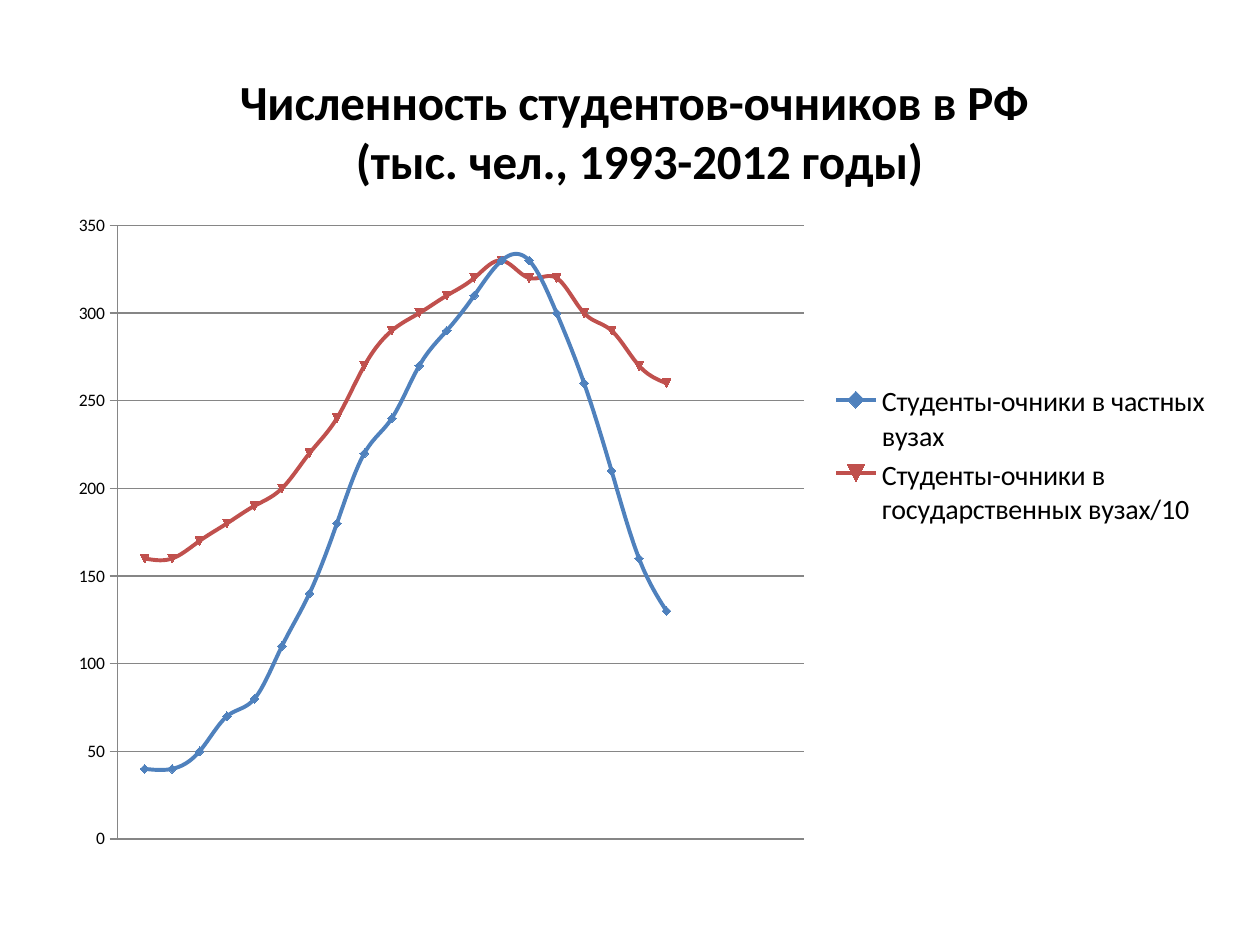
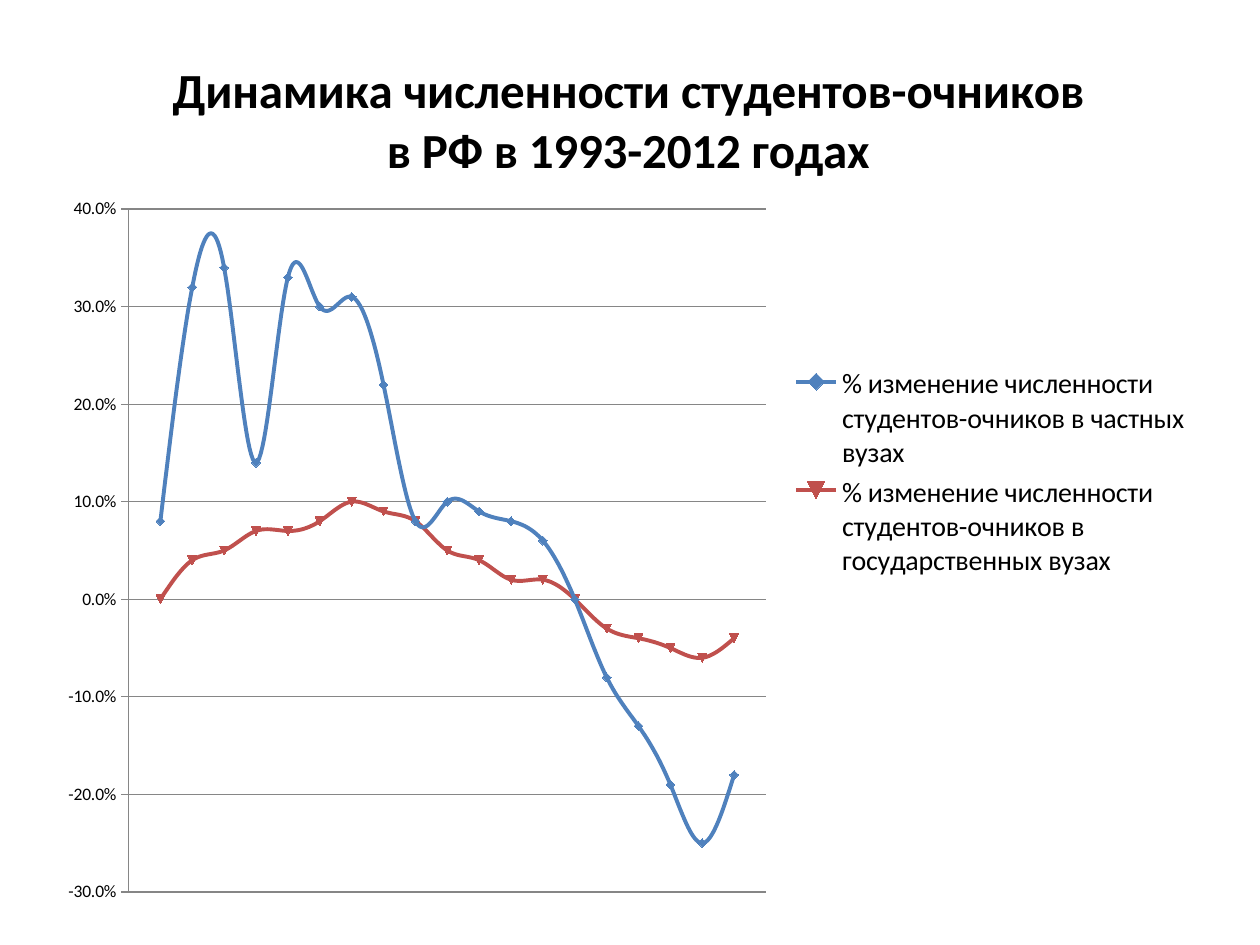
from pptx import Presentation
from pptx.chart.data import XyChartData
from pptx.dml.color import RGBColor
from pptx.enum.chart import XL_CHART_TYPE, XL_LEGEND_POSITION, XL_TICK_MARK
from pptx.oxml import parse_xml
from pptx.oxml.ns import nsdecls, qn
from pptx.util import Inches, Pt

SMOOTH = XL_CHART_TYPE.XY_SCATTER_SMOOTH
RIGHT = XL_LEGEND_POSITION.RIGHT
OUTSIDE, NO_TICK = XL_TICK_MARK.OUTSIDE, XL_TICK_MARK.NONE


def color(hex_string):
    return RGBColor.from_string(hex_string)


def set_values(target, values):
    for name, value in values.items():
        setattr(target, name, value)


def relative(part, box):
    left, top, width, height = box
    fractions = [(part[0] - left) / width, (part[1] - top) / height]
    if len(part) == 4:
        fractions += [part[2] / width, part[3] / height]
    return fractions


class Deck:
    text_color = "000000"
    grid_color = "868686"
    series_colors = ("4F81BD", "C0504D")
    label_font = {"name": "Calibri", "size": Pt(10), "bold": False}
    legend_font = {"name": "Calibri", "size": Pt(16), "bold": False}
    title_font = {"name": "Calibri", "size": Pt(28), "bold": True}

    def __init__(self):
        self.prs = Presentation()
        set_values(self.prs, {"slide_width": Inches(10), "slide_height": Inches(7.5)})
        self.s = None

    def add_slide(self):
        self.s = self.prs.slides.add_slide(self.prs.slide_layouts[6])

    def style_font(self, font, values):
        set_values(font, values)
        font.color.rgb = color(self.text_color)

    def style_line(self, line, hex_string, width):
        line.color.rgb = color(hex_string)
        line.width = Pt(width)

    def place(self, chart, tag, index, fractions, inner=False):
        parent = chart.element.find(".//" + qn(tag))
        for old in parent.findall(qn("c:layout")):
            parent.remove(old)
        target = '<c:layoutTarget val="inner"/>' if inner else ""
        modes = "".join(f'<c:{n}Mode val="edge"/>' for n in "xy")
        sizes = "".join(f'<c:{n} val="{v}"/>' for n, v in zip("xywh", fractions))
        parent.insert(index, parse_xml(
            f'<c:layout {nsdecls("c")}><c:manualLayout>{target}{modes}{sizes}'
            "</c:manualLayout></c:layout>"))

    def add_title(self, chart, text):
        chart.has_title = True
        tf = chart.chart_title.text_frame
        tf.text = text
        for p in tf.paragraphs:
            for r in p.runs:
                self.style_font(r.font, self.title_font)
        chart.chart_title.include_in_layout = False

    def add_legend(self, chart):
        chart.has_legend = True
        set_values(chart.legend, {"position": RIGHT, "include_in_layout": False})
        self.style_font(chart.legend.font, self.legend_font)

    def style_axes(self, chart, x_max, y_scale, number_format):
        low, high, step = y_scale
        set_values(chart.category_axis, {
            "minimum_scale": 0, "maximum_scale": x_max,
            "has_major_gridlines": False, "visible": False})
        axis = chart.value_axis
        set_values(axis, {
            "minimum_scale": low, "maximum_scale": high, "major_unit": step,
            "has_major_gridlines": True,
            "major_tick_mark": OUTSIDE, "minor_tick_mark": NO_TICK})
        set_values(axis.tick_labels, {
            "number_format": number_format, "number_format_is_linked": False})
        self.style_font(axis.tick_labels.font, self.label_font)
        for line in (axis.format.line, axis.major_gridlines.format.line):
            self.style_line(line, self.grid_color, 0.75)

    def style_series(self, chart):
        for series, hex_string in zip(chart.plots[0].series, self.series_colors):
            self.style_line(series.format.line, hex_string, 2.25)
            series.marker.size = 5
            fill = series.marker.format.fill
            fill.solid()
            fill.fore_color.rgb = color(hex_string)
            self.style_line(series.marker.format.line, hex_string, 0.75)
        for smooth in chart.element.iter(qn("c:smooth")):
            smooth.set("val", "1")

    def add_curves(self, title, box, plot_box, legend_box, x_max, y_scale,
                   number_format, series, title_at=None):
        data = XyChartData(number_format=number_format)
        for name, values in series.items():
            points = data.add_series(name)
            for x, y in enumerate(values, 1):
                points.add_data_point(x, y)
        frame = self.s.shapes.add_chart(SMOOTH, *map(Inches, box), data)
        chart = frame.chart
        self.style_font(chart.font, self.label_font)
        self.add_title(chart, title)
        self.add_legend(chart)
        self.style_axes(chart, x_max, y_scale, number_format)
        self.style_series(chart)
        self.place(chart, "c:plotArea", 0, relative(plot_box, box), True)
        self.place(chart, "c:legend", 1, relative(legend_box, box))
        if title_at:
            self.place(chart, "c:title", 1, relative(title_at, box))


STUDENTS = {
    "Студенты-очники в частных вузах": (
        40, 40, 50, 70, 80, 110, 140, 180, 220, 240,
        270, 290, 310, 330, 330, 300, 260, 210, 160, 130),
    "Студенты-очники в государственных вузах/10": (
        160, 160, 170, 180, 190, 200, 220, 240, 270, 290,
        300, 310, 320, 330, 320, 320, 300, 290, 270, 260),
}
CHANGES = {
    "% изменение численности студентов-очников в частных вузах": (
        0.08, 0.32, 0.34, 0.14, 0.33, 0.3, 0.31, 0.22, 0.08, 0.1,
        0.09, 0.08, 0.06, 0, -0.08, -0.13, -0.19, -0.25, -0.18),
    "% изменение численности студентов-очников в государственных вузах": (
        0, 0.04, 0.05, 0.07, 0.07, 0.08, 0.1, 0.09, 0.08, 0.05,
        0.04, 0.02, 0.02, 0, -0.03, -0.04, -0.05, -0.06, -0.04),
}


def main():
    deck = Deck()
    deck.add_slide()
    deck.add_curves(
        "Численность студентов-очников в РФ \n(тыс. чел., 1993-2012 годы)",
        box=(0.43, 0.36, 9.29, 6.51), plot_box=(0.93, 1.79, 5.45, 4.87),
        legend_box=(6.52, 3.02, 3.16, 1.21), x_max=25, y_scale=(0, 350, 50),
        number_format="General", series=STUDENTS)
    deck.add_slide()
    deck.add_curves(
        "Динамика численности студентов-очников\nв РФ в 1993-2012 годах",
        box=(0.35, 0.21, 9.21, 7.09), plot_box=(1.02, 1.66, 5.06, 5.42),
        legend_box=(6.25, 2.87, 3.22, 1.77), x_max=20, y_scale=(-0.3, 0.4, 0.1),
        number_format="0.0%", series=CHANGES, title_at=(1.34, 0.45))
    deck.prs.save("out.pptx")


if __name__ == "__main__":
    main()
